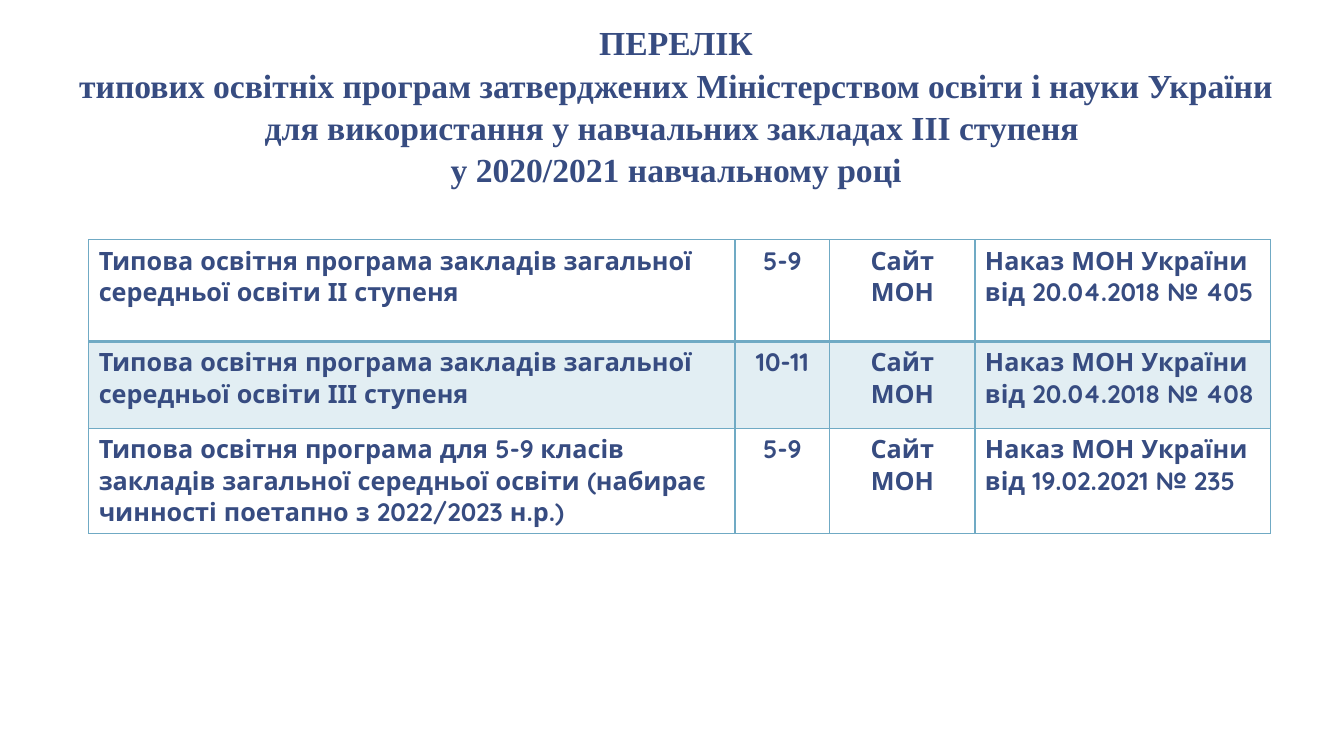
"""Builds a slide listing the approved model education programmes."""
from dataclasses import dataclass

from lxml.etree import SubElement
from pptx import Presentation
from pptx.dml.color import RGBColor
from pptx.enum.text import MSO_ANCHOR, MSO_AUTO_SIZE, PP_ALIGN
from pptx.oxml.ns import qn
from pptx.slide import Slide
from pptx.table import _Cell as Cell
from pptx.text.text import _Paragraph as Paragraph
from pptx.util import Inches, Pt

NAVY, TEAL, PALE = "374C81", "70AAC4", "E2EEF3"
COLUMNS = (6.41, 0.94, 1.44, 2.93)
ALIGNS = (PP_ALIGN.LEFT, PP_ALIGN.CENTER, PP_ALIGN.CENTER, PP_ALIGN.LEFT)
TITLE = (
    "ПЕРЕЛІК\vтипових освітніх програм затверджених Міністерством освіти і науки України "
    "для використання у навчальних закладах ІІІ ступеня \vу 2020/2021 навчальному році"
)


@dataclass
class Programme:
    name: str
    grades: str
    order: str
    height: float
    fill: str = ""
    top: float = 1
    bottom: float = 1

    def texts(self) -> tuple[str, ...]:
        return self.name, self.grades, "Сайт МОН", f"Наказ МОН України\nвід {self.order}"


PROGRAMMES = (
    Programme("Типова освітня програма закладів загальної середньої освіти ІІ ступеня",
              "5-9", "20.04.2018 № 405", 1.01, bottom=2),
    Programme("Типова освітня програма закладів загальної середньої освіти ІІІ ступеня",
              "10-11", "20.04.2018 № 408", 0.86, PALE, top=2),
    Programme("Типова освітня програма для 5-9 класів закладів загальної середньої освіти "
              "(набирає чинності поетапно з 2022/2023 н.р.)",
              "5-9", "19.02.2021 № 235", 1.04),
)


def rgb(value: str) -> RGBColor:
    return RGBColor.from_string(value)


def style(p: Paragraph, name: str, size: float, align: PP_ALIGN) -> None:
    p.alignment = align
    p.font.name, p.font.size, p.font.bold = name, Pt(size), True
    p.font.color.rgb = rgb(NAVY)


def add_borders(cell: Cell, top: float, bottom: float) -> None:
    props = cell._tc.get_or_add_tcPr()
    for side, width in (("L", 1), ("R", 1), ("T", top), ("B", bottom)):
        line = SubElement(props, qn(f"a:ln{side}"), w=str(Pt(width)))
        SubElement(SubElement(line, qn("a:solidFill")), qn("a:srgbClr"), val=TEAL)


def fill_cell(cell: Cell, text: str, align: PP_ALIGN, row: Programme) -> None:
    cell.text = text
    for p in cell.text_frame.paragraphs:
        style(p, "Quicksand", 18, align)
    add_borders(cell, row.top, row.bottom)
    if row.fill:
        cell.fill.solid()
        cell.fill.fore_color.rgb = rgb(row.fill)
    else:
        cell.fill.background()


def add_title(s: Slide) -> None:
    sp = s.shapes.title
    sp.left, sp.top = Inches(0.65), Inches(0.08)
    sp.width, sp.height = Inches(12.11), Inches(1.87)
    tf = sp.text_frame
    tf.text = TITLE
    tf.word_wrap, tf.auto_size = True, MSO_AUTO_SIZE.NONE
    tf.vertical_anchor = MSO_ANCHOR.BOTTOM
    tf.margin_left = tf.margin_right = Inches(0.13)
    tf.margin_top = tf.margin_bottom = Inches(0.07)
    p = tf.paragraphs[0]
    style(p, "Times New Roman", 24, PP_ALIGN.CENTER)
    p.line_spacing = 1.05


def add_programmes(s: Slide) -> None:
    height = sum(row.height for row in PROGRAMMES)
    table = s.shapes.add_table(len(PROGRAMMES), len(COLUMNS), Inches(0.88), Inches(2.38),
                               Inches(sum(COLUMNS)), Inches(height)).table
    for column, width in zip(table.columns, COLUMNS):
        column.width = Inches(width)
    for i, row in enumerate(PROGRAMMES):
        table.rows[i].height = Inches(row.height)
        for j, (text, align) in enumerate(zip(row.texts(), ALIGNS)):
            fill_cell(table.cell(i, j), text, align, row)


def main() -> None:
    prs = Presentation()
    prs.slide_width, prs.slide_height = Inches(13.33), Inches(7.5)
    s = prs.slides.add_slide(prs.slide_layouts[5])
    add_title(s)
    add_programmes(s)
    prs.save("out.pptx")


if __name__ == "__main__":
    main()
